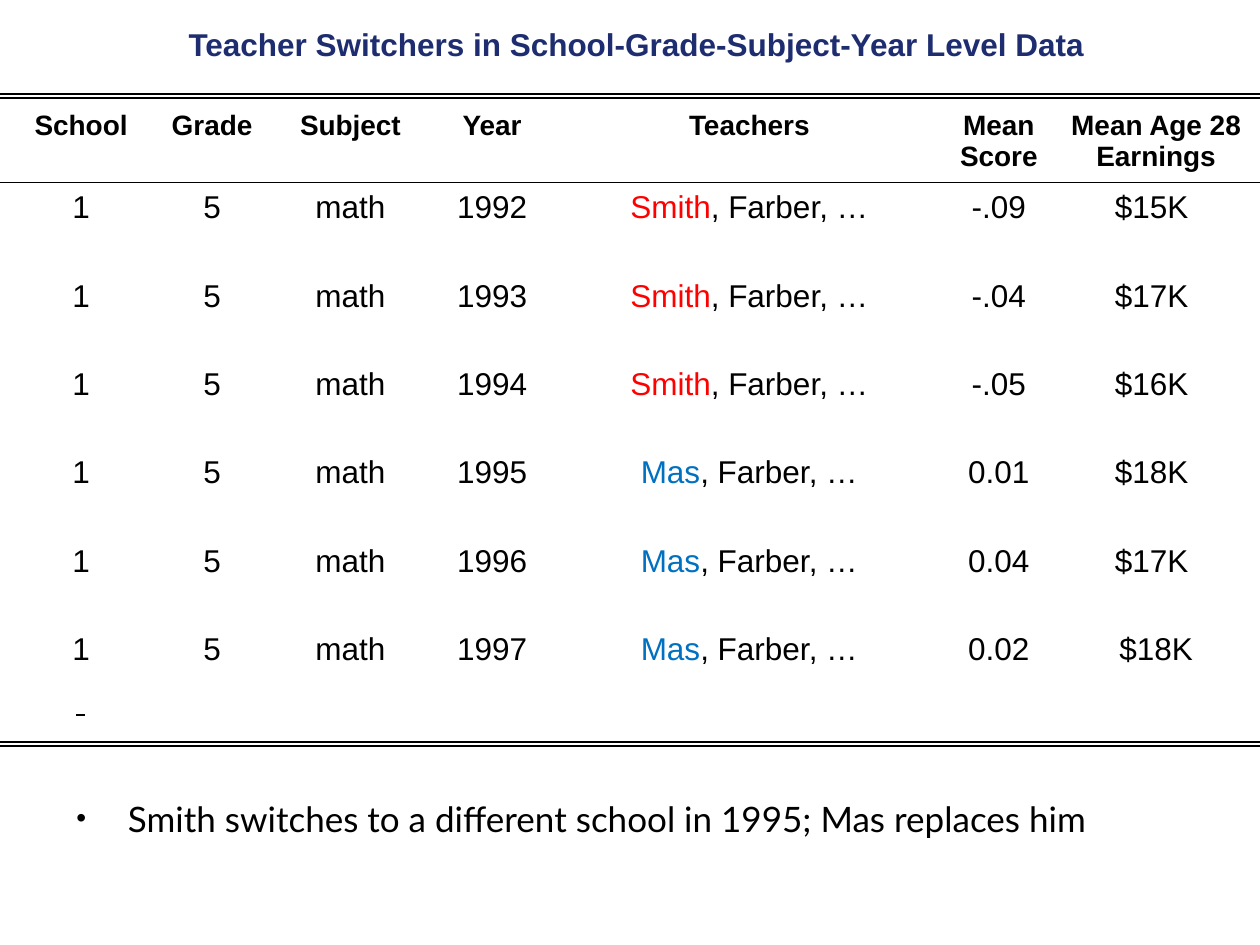
from dataclasses import dataclass
from lxml.etree import SubElement as Sub
from pptx import Presentation as Deck
from pptx.dml.color import RGBColor as Color
from pptx.enum.shapes import MSO_CONNECTOR as Link
from pptx.enum.text import MSO_ANCHOR as Anchor, MSO_AUTO_SIZE as Fit, PP_ALIGN as Align
from pptx.oxml.ns import qn
from pptx.util import Cm, Pt


@dataclass(frozen=True)
class Theme:
    ink: str = "000000"
    navy: str = "1E2D70"
    red: str = "FF0000"
    blue: str = "0070C0"
    sans: str = "Arial"
    text: str = "Lato"
    head: int = 16
    main: int = 18
    note: int = 20
    rule: int = 1


THEME = Theme()
WIDTH, HEIGHT = 25.4, 19.05
COLS = [2.87, 2.41, 3.17, 2.54, 7.83, 2.23, 4.11]
HEADS = ["School", "Grade", "Subject", "Year", "Teachers",
         "Mean Score", "Mean Age 28 Earnings"]
DATA = [
    ("1992", "Smith", "-.09", "$15K "),
    ("1993", "Smith", "-.04", "$17K "),
    ("1994", "Smith", "-.05", "$16K "),
    ("1995", "Mas", "0.01", "$18K "),
    ("1996", "Mas", "0.04", "$17K "),
    ("1997", "Mas", "0.02", "$18K"),
]
HUES = {"Smith": THEME.red, "Mas": THEME.blue}


def style(run, size, hue=THEME.ink, bold=False, face=THEME.sans):
    font = run.font
    font.name, font.size, font.bold = face, Pt(size), bold
    font.color.rgb = Color.from_string(hue)


def add_title(slide, left, top, width, height):
    title = slide.shapes.title
    title.left, title.top = Cm(left), Cm(top)
    title.width, title.height = Cm(width), Cm(height)
    frame = title.text_frame
    frame.text = "Teacher Switchers in School-Grade-Subject-Year Level Data"
    frame.margin_left = frame.margin_right = 0
    frame.margin_top = frame.margin_bottom = 0
    frame.vertical_anchor = Anchor.TOP
    frame.word_wrap = False
    frame.auto_size = Fit.SHAPE_TO_FIT_TEXT
    para = frame.paragraphs[0]
    para.alignment = Align.CENTER
    style(para.runs[0], THEME.main, THEME.navy, True)


def fill_cell(cell, parts, size, bold=False):
    cell.fill.background()
    para = cell.text_frame.paragraphs[0]
    para.alignment = Align.CENTER
    for text, hue in parts:
        run = para.add_run()
        run.text = text
        style(run, size, hue, bold)


def add_grid(slide, left, top, head, step):
    count = len(DATA) + 1
    frame = slide.shapes.add_table(count, len(COLS), Cm(left), Cm(top),
                                   Cm(sum(COLS)), Cm(head + step * len(DATA)))
    table = frame.table
    table.first_row = table.horz_banding = False
    for col, width in zip(table.columns, COLS):
        col.width = Cm(width)
    for row in table.rows:
        row.height = Cm(step)
    table.rows[0].height = Cm(head)
    for col, text in enumerate(HEADS):
        fill_cell(table.cell(0, col), [(text, THEME.ink)], THEME.head, True)
    for row, (year, name, score, pay) in enumerate(DATA, 1):
        staff = [(name, HUES[name]), (", Farber, …", THEME.ink)]
        plain = [[(text, THEME.ink)] for text in ("1", "5", "math", year, score, pay)]
        for col, parts in enumerate(plain[:4] + [staff] + plain[4:]):
            fill_cell(table.cell(row, col), parts, THEME.main)


def add_rule(shapes, left, top, width):
    line = shapes.add_connector(Link.STRAIGHT, Cm(left), Cm(top),
                                Cm(left + width), Cm(top))
    line.line.color.rgb = Color.from_string(THEME.ink)
    line.line.width = Pt(THEME.rule)
    Sub(line.element.spPr, qn("a:effectLst"))


def add_pair(slide, left, top, width, gap=0.08):
    group = slide.shapes.add_group_shape()
    for shift in (0, gap):
        add_rule(group.shapes, left, top + shift, width)


def add_note(slide, left, top, width, height):
    add_rule(slide.shapes, left + 0.91, top + 1.02, 0.17)
    box = slide.shapes.add_textbox(Cm(left), Cm(top), Cm(width), Cm(height))
    frame = box.text_frame
    frame.word_wrap = True
    frame.vertical_anchor = Anchor.BOTTOM
    para = frame.paragraphs[0]
    para.text = "Smith switches to a different school in 1995; Mas replaces him"
    props = para._p.get_or_add_pPr()
    props.set("marL", str(Cm(1.7)))
    props.set("indent", str(Cm(-1.04)))
    Sub(props, qn("a:buSzPct"), val="80000")
    Sub(props, qn("a:buFont"), typeface=THEME.sans)
    Sub(props, qn("a:buChar"), char="•")
    style(para.runs[0], THEME.note, face=THEME.text)


def main():
    deck = Deck()
    deck.slide_width, deck.slide_height = Cm(WIDTH), Cm(HEIGHT)
    slide = deck.slides.add_slide(deck.slide_layouts[5])
    add_grid(slide, 0.2, 2.1, 1.6, 1.78)
    add_title(slide, 3.78, 0.5, 18.1, 0.77)
    add_pair(slide, 0, 1.9, WIDTH)
    add_rule(slide.shapes, 0, 3.68, WIDTH)
    add_pair(slide, 0, 14.96, WIDTH)
    add_note(slide, 0.63, 13.4, 24.56, 3.64)
    deck.save("out.pptx")


if __name__ == "__main__":
    main()
